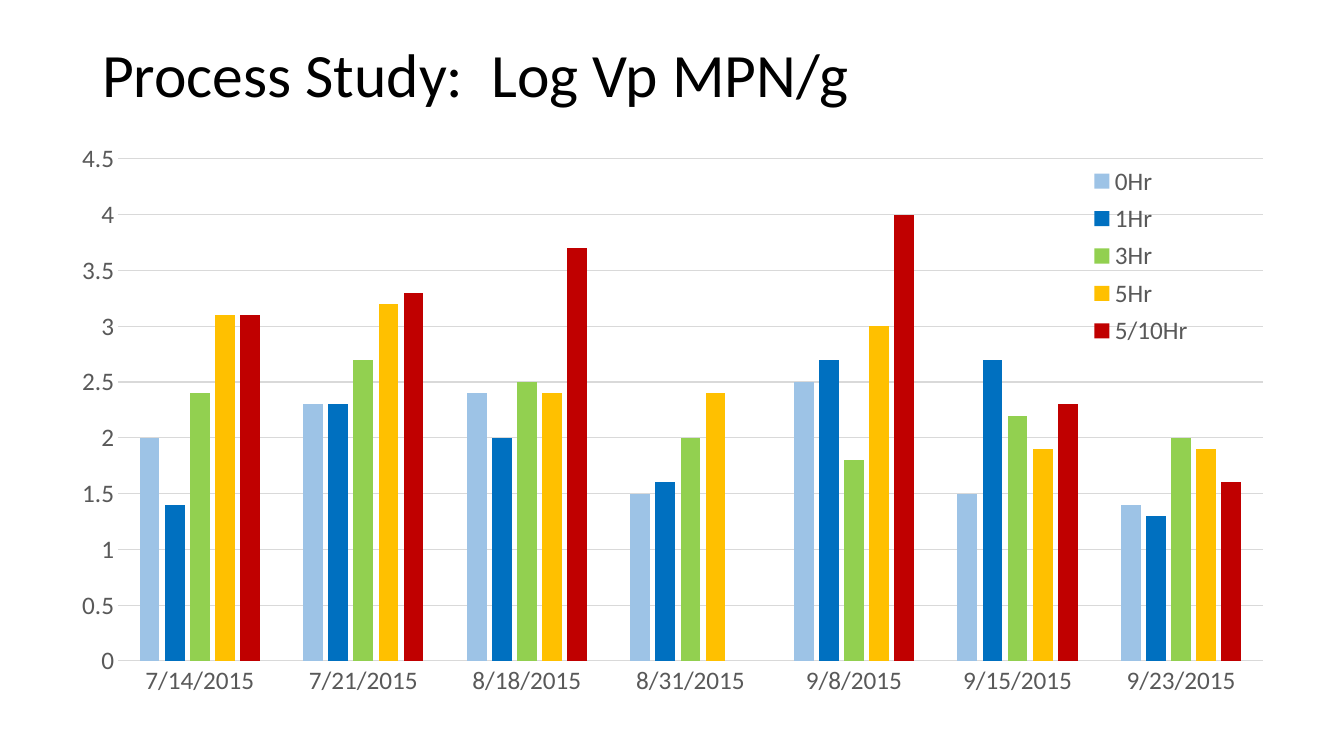
from lxml.etree import SubElement
from pptx import Presentation
from pptx.chart.data import CategoryChartData
from pptx.dml.color import RGBColor
from pptx.enum.chart import XL_CHART_TYPE, XL_LEGEND_POSITION, XL_TICK_MARK
from pptx.enum.text import MSO_ANCHOR, PP_ALIGN
from pptx.oxml.ns import qn
from pptx.util import Emu, Pt

EMU_PER_PX = 914400 / 100.8
SLIDE_SIZE = (1344, 756)
TITLE_BOX = (92, 30, 1159, 96)
CHART_BOX = (53, 137, 1239, 580)
PLOT_BOX = (65, 22, 1145, 502)
LEGEND_BOX = (1020, 22, 136, 194)
FONT = "Calibri"
TEXT_GRAY = "595959"
LINE_GRAY = "D9D9D9"

DATES = ["7/14/2015", "7/21/2015", "8/18/2015", "8/31/2015",
         "9/8/2015", "9/15/2015", "9/23/2015"]
SERIES = [
    ("0Hr", "9DC3E6", (2, 2.3, 2.4, 1.5, 2.5, 1.5, 1.4)),
    ("1Hr", "0070C0", (1.4, 2.3, 2, 1.6, 2.7, 2.7, 1.3)),
    ("3Hr", "92D050", (2.4, 2.7, 2.5, 2, 1.8, 2.2, 2)),
    ("5Hr", "FFC000", (3.1, 3.2, 2.4, 2.4, 3, 1.9, 1.9)),
    ("5/10Hr", "C00000", (3.1, 3.3, 3.7, None, 4, 2.3, 1.6)),
]


def px(length):
    """Turn a length in px into EMU."""
    return Emu(round(length * EMU_PER_PX))


def color(hex_value):
    """Turn a hex string into a colour."""
    return RGBColor.from_string(hex_value)


def set_values(target, values):
    """Set each named attribute of the target."""
    for name, value in values.items():
        setattr(target, name, value)


def set_font(font, size, hex_value):
    """Give a font its name, size and colour."""
    set_values(font, {"name": FONT, "size": Pt(size), "bold": False})
    font.color.rgb = color(hex_value)


def set_line(line):
    """Draw a thin gray line."""
    line.color.rgb = color(LINE_GRAY)
    line.width = Pt(0.75)


def set_layout(element, part_box, chart_box, inner=False):
    """Place a plot area or legend, given in px, inside the chart box."""
    for old_layout in element.findall(qn("c:layout")):
        element.remove(old_layout)
    layout = SubElement(element, qn("c:layout"))
    position = 1 if element.tag == qn("c:legend") else 0
    element.insert(position, layout)
    manual = SubElement(layout, qn("c:manualLayout"))
    if inner:
        SubElement(manual, qn("c:layoutTarget")).set("val", "inner")
    for side in "xy":
        SubElement(manual, qn(f"c:{side}Mode")).set("val", "edge")
    for side, length, whole in zip("xywh", part_box, chart_box[2:] * 2):
        SubElement(manual, qn(f"c:{side}")).set("val", str(length / whole))


def add_title(slide, box):
    """Place and format the title in its box."""
    title = slide.shapes.title
    set_values(title, dict(zip(("left", "top", "width", "height"), map(px, box))))
    frame = title.text_frame
    set_values(frame, {"text": "Process Study:  Log Vp MPN/g",
                       "word_wrap": True, "vertical_anchor": MSO_ANCHOR.MIDDLE})
    paragraph = frame.paragraphs[0]
    set_values(paragraph, {"alignment": PP_ALIGN.LEFT, "line_spacing": 0.9})
    set_font(paragraph.runs[0].font, 44, "000000")


def format_axes(chart):
    """Format both axes and the gridlines."""
    for axis in (chart.category_axis, chart.value_axis):
        set_values(axis, {"major_tick_mark": XL_TICK_MARK.NONE,
                          "minor_tick_mark": XL_TICK_MARK.NONE})
        set_font(axis.tick_labels.font, 18, TEXT_GRAY)
    set_line(chart.category_axis.format.line)
    value_axis = chart.value_axis
    set_values(value_axis, {"minimum_scale": 0, "maximum_scale": 4.5,
                            "major_unit": 0.5, "has_major_gridlines": True})
    set_line(value_axis.major_gridlines.format.line)
    value_axis.format.line.fill.background()


def format_legend(chart, chart_box):
    """Lay the legend over the upper right of the plot."""
    chart.has_legend = True
    legend = chart.legend
    set_values(legend, {"position": XL_LEGEND_POSITION.RIGHT,
                        "include_in_layout": False})
    set_font(legend.font, 18, TEXT_GRAY)
    set_layout(legend._element, LEGEND_BOX, chart_box)


def add_column_chart(slide, box):
    """Place the clustered columns in their box."""
    data = CategoryChartData()
    data.categories = DATES
    for name, _, values in SERIES:
        data.add_series(name, values)
    chart = slide.shapes.add_chart(
        XL_CHART_TYPE.COLUMN_CLUSTERED, *map(px, box), data).chart
    chart.has_title = False
    set_font(chart.font, 18, "000000")
    plot = chart.plots[0]
    set_values(plot, {"gap_width": 219, "overlap": -27,
                      "vary_by_categories": False})
    for series, (_, hex_value, _) in zip(plot.series, SERIES):
        series.format.fill.solid()
        series.format.fill.fore_color.rgb = color(hex_value)
    format_axes(chart)
    format_legend(chart, box)
    set_layout(chart._chartSpace.chart.plotArea, PLOT_BOX, box, inner=True)


def main():
    """Build and save the presentation."""
    presentation = Presentation()
    presentation.slide_width, presentation.slide_height = map(px, SLIDE_SIZE)
    slide = presentation.slides.add_slide(presentation.slide_layouts[5])
    add_title(slide, TITLE_BOX)
    add_column_chart(slide, CHART_BOX)
    presentation.save("out.pptx")


if __name__ == "__main__":
    main()
